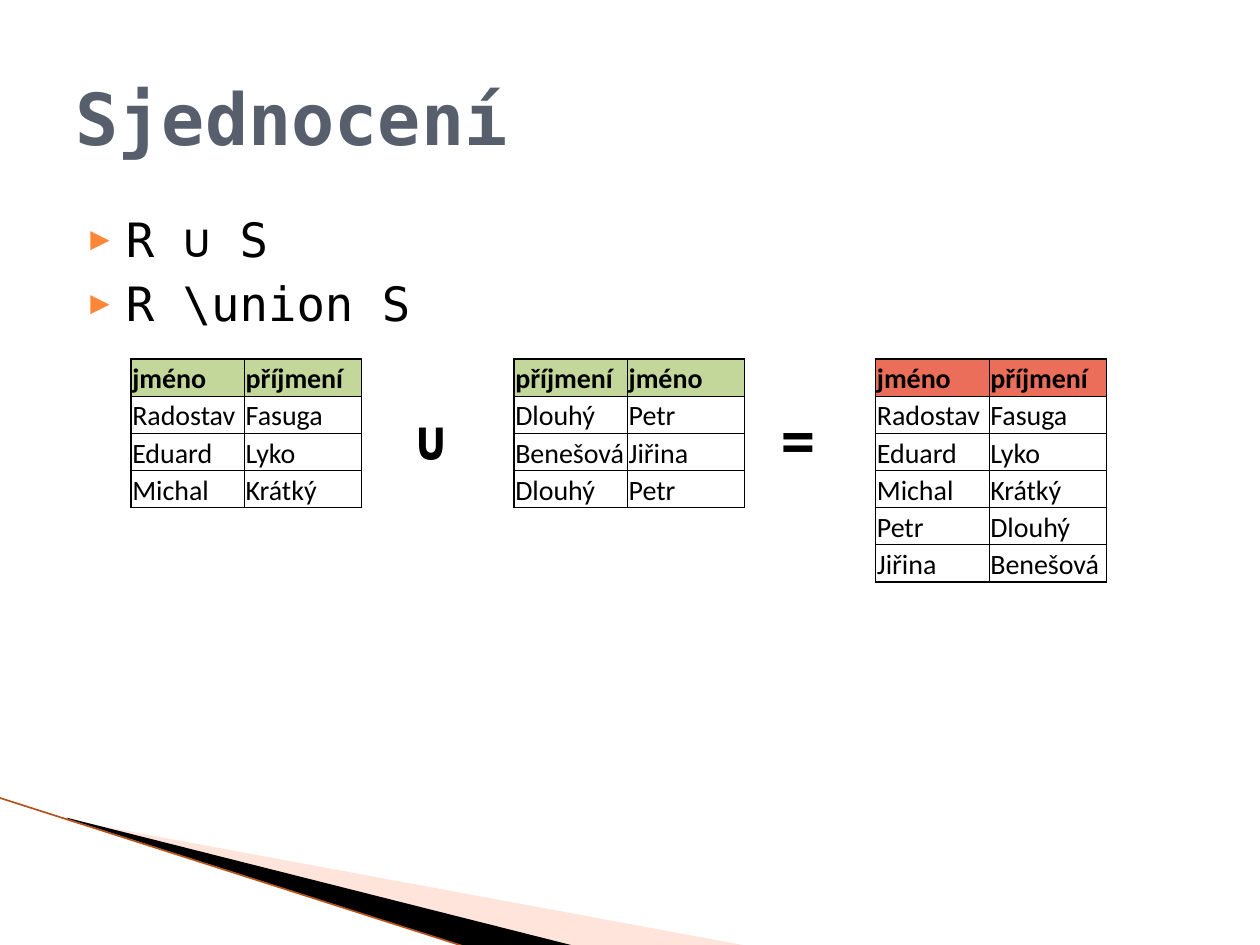
from lxml import etree
from pptx import Presentation
from pptx.dml.color import RGBColor
from pptx.enum.shapes import MSO_CONNECTOR
from pptx.enum.text import MSO_ANCHOR, PP_ALIGN
from pptx.oxml.ns import qn
from pptx.util import Emu, Inches, Pt

LINE = MSO_CONNECTOR.STRAIGHT
MIDDLE, BOTTOM = MSO_ANCHOR.MIDDLE, MSO_ANCHOR.BOTTOM
LEFT = PP_ALIGN.LEFT
MONO, SANS = "DejaVu Sans Mono", "Calibri"
BLACK, GREEN, RED = "000000", "C4D79B", "EB6E5A"
COLS, ROW = (0.9, 0.93), 0.295
TABLE_TOP, SIGN_TOP = 2.85, 3.16
TABLES = [
    (1.04, GREEN, ["jméno příjmení", "Radostav Fasuga", "Eduard Lyko",
                   "Michal Krátký"]),
    (4.08, GREEN, ["příjmení jméno", "Dlouhý Petr", "Benešová Jiřina",
                   "Dlouhý Petr"]),
    (6.95, RED, ["jméno příjmení", "Radostav Fasuga", "Eduard Lyko",
                 "Michal Krátký", "Petr Dlouhý", "Jiřina Benešová"]),
]
SIGNS = [(3.19, "∪"), (6.1, "=")]


def rgb(code):
    return RGBColor.from_string(code)


def style(para, size, face=MONO, color=BLACK, bold=False):
    for run in para.runs:
        font = run.font
        font.size, font.name, font.bold = Pt(size), face, bold
        font.color.rgb = rgb(color)


def child(parent, tag, **attrs):
    return etree.SubElement(parent, qn(tag), **attrs)


def add_wedge(slide, points, color, alpha=None):
    spots = [(Inches(x), Inches(y)) for x, y in points]
    pen = slide.shapes.build_freeform(*spots[0])
    pen.add_line_segments(spots[1:], close=True)
    shape = pen.convert_to_shape()
    shape.shadow.inherit = False
    shape.fill.solid()
    shape.fill.fore_color.rgb = rgb(color)
    shape.line.fill.background()
    if alpha:
        tint = shape.fill._xPr.find(".//" + qn("a:srgbClr"))
        child(tint, "a:alpha", val=str(alpha * 1000))


def add_edge(slide, start, end, color):
    edge = slide.shapes.add_connector(
        LINE, *[Inches(v) for v in start + end])
    edge.line.color.rgb = rgb(color)
    edge.line.width = Pt(0.95)
    child(edge._element.spPr, "a:effectLst")


def add_box(slide, left, top, width, height):
    box = slide.shapes.add_textbox(
        Inches(left), Inches(top), Inches(width), Inches(height))
    box.text_frame.word_wrap = True
    return box.text_frame


def set_title(slide, text):
    title = slide.shapes.title
    title.left, title.top = Inches(0.5), Inches(0.3)
    title.width, title.height = Inches(9), Inches(1.25)
    frame = title.text_frame
    frame.text = text
    frame.vertical_anchor = MIDDLE
    frame.paragraphs[0].alignment = LEFT
    style(frame.paragraphs[0], 41, color="575F6D", bold=True)


def add_bullets(slide, lines):
    frame = add_box(slide, 0.5, 1.62, 9, 4.95)
    frame.text = "\n".join(lines)
    for i, para in enumerate(frame.paragraphs):
        if i:
            para.space_before = Pt(4)
        props = para._p.get_or_add_pPr()
        props.set("marL", str(Inches(0.4)))
        props.set("indent", str(Inches(-0.28)))
        tint = child(props, "a:buClr")
        child(tint, "a:srgbClr", val="FE8637")
        child(props, "a:buSzPct", val="68000")
        child(props, "a:buFont", typeface=MONO)
        child(props, "a:buChar", char="▶")
        style(para, 27)


def add_sign(slide, left, text):
    frame = add_box(slide, left, SIGN_TOP, 0.79, 0.64)
    frame.text = text
    style(frame.paragraphs[0], 32, bold=True)


def set_border(cell, side, width):
    props = cell._tc.get_or_add_tcPr()
    line = child(props, "a:ln" + side, w=str(Pt(width)))
    child(child(line, "a:solidFill"), "a:srgbClr", val=BLACK)


def add_relation(slide, left, color, lines):
    """Table with a coloured head row and a thicker outer border."""
    count = len(lines)
    table = slide.shapes.add_table(
        count, len(COLS), Inches(left), Inches(TABLE_TOP),
        Inches(sum(COLS)), Inches(ROW * count)).table
    table.first_row = table.horz_banding = False
    for col, width in zip(table.columns, COLS):
        col.width = Inches(width)
    for r, line in enumerate(lines):
        table.rows[r].height = Inches(ROW)
        for c, word in enumerate(line.split()):
            cell = table.cell(r, c)
            cell.text = word
            cell.vertical_anchor = BOTTOM
            cell.margin_left = cell.margin_right = Inches(0.01)
            cell.margin_top, cell.margin_bottom = Inches(0.01), Emu(0)
            style(cell.text_frame.paragraphs[0], 16, SANS, bold=r == 0)
            outer = {"L": c == 0, "R": c == len(COLS) - 1,
                     "T": r == 0, "B": r == count - 1}
            for side, thick in outer.items():
                set_border(cell, side, 1 if thick else 0.5)
            if r == 0:
                cell.fill.solid()
                cell.fill.fore_color.rgb = rgb(color)
            else:
                cell.fill.background()


def main():
    deck = Presentation()
    deck.slide_width, deck.slide_height = Inches(10), Inches(7.5)
    slide = deck.slides.add_slide(deck.slide_layouts[5])
    add_wedge(slide, [(0.55, 6.51), (5.95, 7.51), (4.56, 7.51), (0.55, 6.5)],
              "FFBCA5", 40)
    add_wedge(slide, [(0.53, 6.49), (4.57, 7.51), (3.72, 7.52), (0.54, 6.5)],
              BLACK)
    add_edge(slide, (-0.01, 6.33), (3.71, 7.52), "B4541A")
    set_title(slide, "Sjednocení")
    add_bullets(slide, ["R ∪ S", "R \\union S"])
    for table in TABLES:
        add_relation(slide, *table)
    for sign in SIGNS:
        add_sign(slide, *sign)
    deck.save("out.pptx")


if __name__ == "__main__":
    main()
